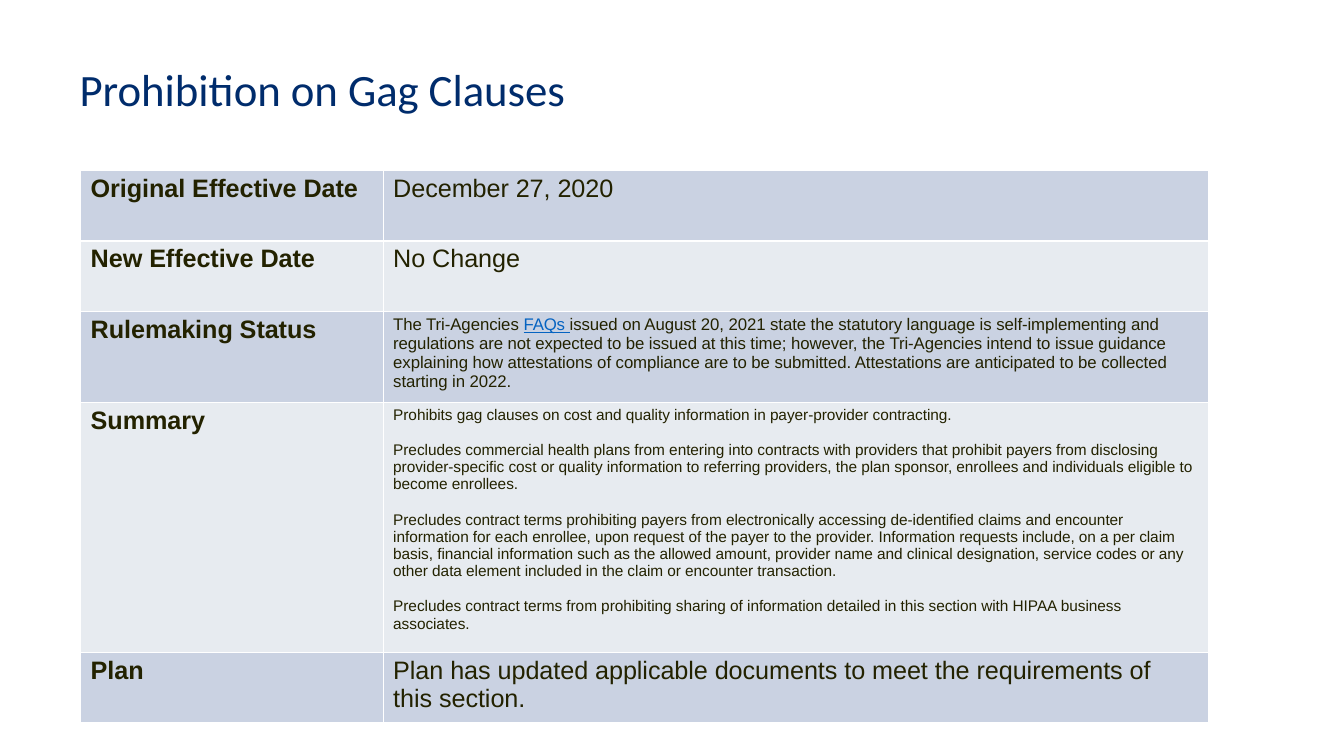
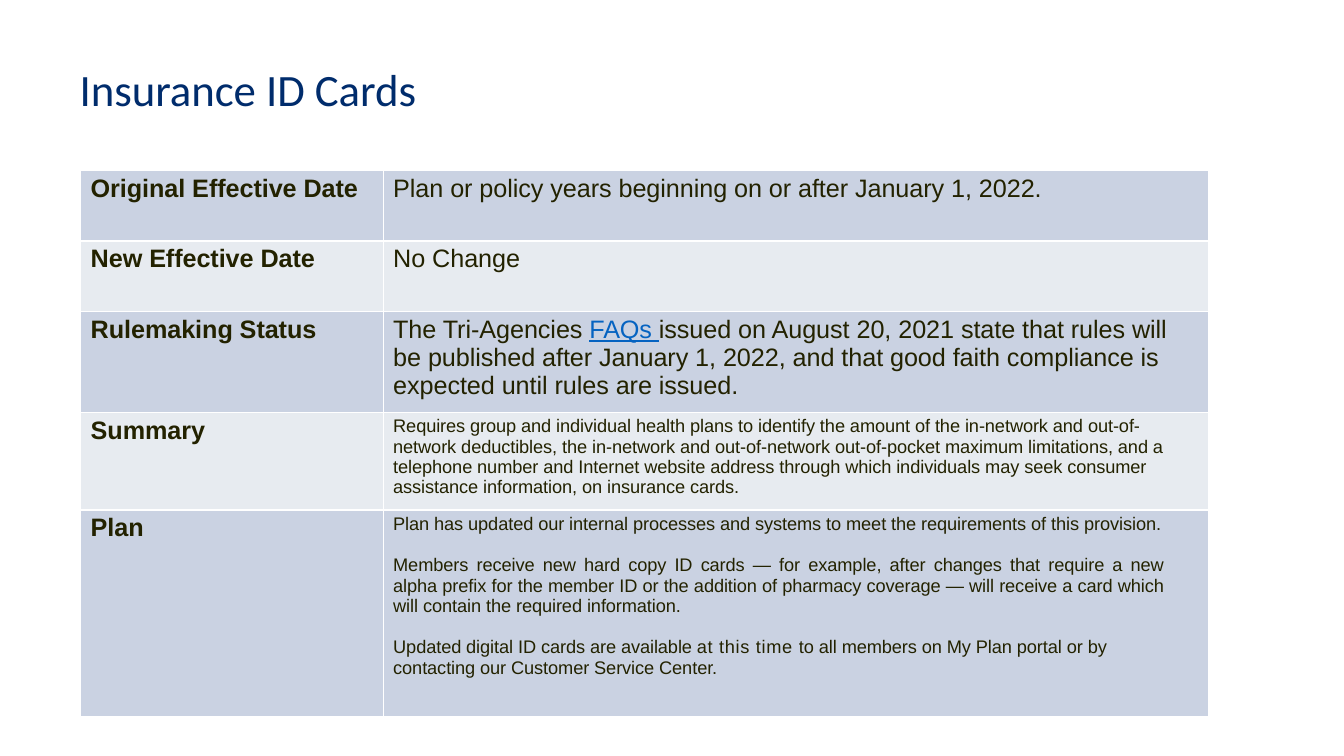
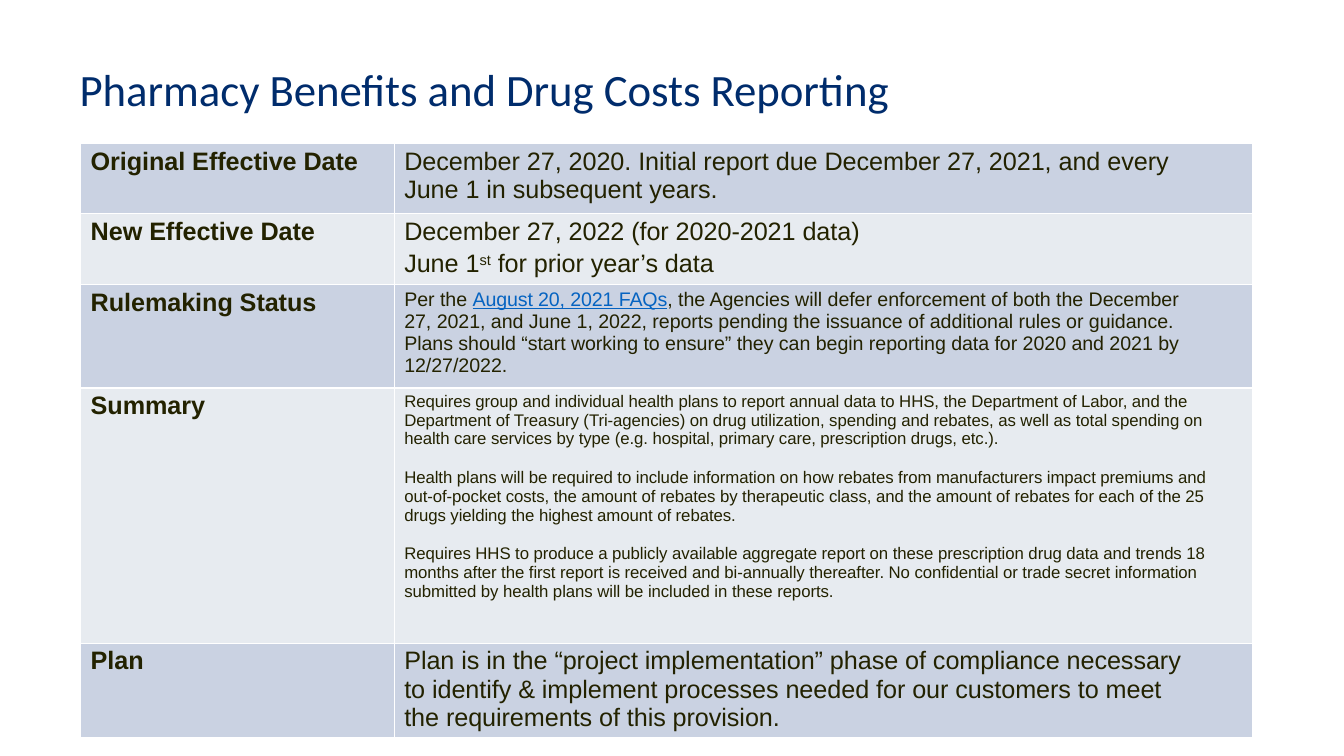
from dataclasses import dataclass

from lxml import etree
from pptx import Presentation
from pptx.dml.color import RGBColor
from pptx.enum.text import MSO_ANCHOR, MSO_AUTO_SIZE, PP_ALIGN
from pptx.oxml.ns import qn
from pptx.util import Inches, Pt

LEFT, JUSTIFY = PP_ALIGN.LEFT, PP_ALIGN.JUSTIFY
TOP, MIDDLE = MSO_ANCHOR.TOP, MSO_ANCHOR.MIDDLE
NO_AUTOFIT = MSO_AUTO_SIZE.NONE
TITLE_ONLY = 5

COLORS = {
    "title": "002C6C",
    "text": "232200",
    "link": "0563C1",
    "band_dark": "CAD2E2",
    "band_light": "E7EBF0",
    "border": "FFFFFF",
}
LABELS = ["Original Effective Date", "New Effective Date", "Rulemaking Status", "Summary", "Plan"]
LINK = {"color": "link", "underline": True, "spacing": -10}
SUPERSCRIPT = {"baseline": 30000}


@dataclass
class Entry:
    """Right-hand cell of a row; each paragraph is a string or a list of (text, style) runs."""
    height: float
    paragraphs: list
    size: float = 18
    right_margin: float = 0.2
    gap: float = 0
    justified: int = 0


class Deck:
    def __init__(self):
        self.presentation = Presentation()
        self.presentation.slide_width = Inches(13.33)
        self.presentation.slide_height = Inches(7.5)
        self.slide = None

    def add_slide(self, title):
        layout = self.presentation.slide_layouts[TITLE_ONLY]
        self.slide = self.presentation.slides.add_slide(layout)
        shape = self.slide.shapes.title
        shape.left, shape.top = Inches(0.79), Inches(0.6)
        shape.width, shape.height = Inches(11), Inches(0.56)
        frame = shape.text_frame
        frame.margin_left = frame.margin_right = frame.margin_top = frame.margin_bottom = 0
        frame.auto_size = NO_AUTOFIT
        frame.vertical_anchor = MIDDLE
        frame.text = title
        paragraph = frame.paragraphs[0]
        paragraph.alignment = LEFT
        self.style_run(paragraph.runs[0], 32, font="Calibri", color="title")

    def style_run(self, run, size, font="Arial", color="text", bold=False,
                  underline=False, spacing=-5, baseline=0):
        run.font.name = font
        run.font.size = Pt(size)
        run.font.bold = bold
        run.font.underline = underline
        run.font.color.rgb = RGBColor.from_string(COLORS[color])
        properties = run.font._element
        properties.set("spc", str(spacing))
        if baseline:
            properties.set("baseline", str(baseline))

    def add_runs(self, paragraph, content, size, bold=False):
        pieces = [(content, {})] if isinstance(content, str) else content
        for text, style in pieces:
            run = paragraph.add_run()
            run.text = text
            self.style_run(run, size, bold=bold, **style)

    def format_cell(self, cell, fill, right_margin=0):
        cell.margin_left, cell.margin_right = Inches(0.1), Inches(right_margin)
        cell.margin_top, cell.margin_bottom = Inches(0.04), 0
        cell.vertical_anchor = TOP
        properties = cell._tc.get_or_add_tcPr()
        for side in ("a:lnL", "a:lnR", "a:lnT", "a:lnB"):
            line = etree.SubElement(properties, qn(side), w=str(Pt(1)))
            solid = etree.SubElement(line, qn("a:solidFill"))
            etree.SubElement(solid, qn("a:srgbClr"), val=COLORS["border"])
        cell.fill.solid()
        cell.fill.fore_color.rgb = RGBColor.from_string(COLORS[fill])

    def add_provision_table(self, top, widths, entries):
        height = sum(entry.height for entry in entries)
        frame = self.slide.shapes.add_table(
            len(entries), 2, Inches(0.8), Inches(top), Inches(sum(widths)), Inches(height))
        table = frame.table
        table.first_row = table.horz_banding = False
        for column, width in zip(table.columns, widths):
            column.width = Inches(width)
        for index, (label, entry) in enumerate(zip(LABELS, entries)):
            table.rows[index].height = Inches(entry.height)
            fill = "band_light" if index % 2 else "band_dark"
            label_cell, body_cell = table.cell(index, 0), table.cell(index, 1)
            self.format_cell(label_cell, fill)
            self.add_runs(label_cell.text_frame.paragraphs[0], label, 18, bold=True)
            self.format_cell(body_cell, fill, entry.right_margin)
            self.fill_body(body_cell.text_frame, entry)

    def fill_body(self, text_frame, entry):
        for index, content in enumerate(entry.paragraphs):
            paragraph = text_frame.add_paragraph() if index else text_frame.paragraphs[0]
            if index:
                paragraph.space_before = Pt(entry.gap)
            paragraph.alignment = JUSTIFY if index < entry.justified else LEFT
            self.add_runs(paragraph, content, entry.size)


def main():
    deck = Deck()

    deck.add_slide("Prohibition on Gag Clauses")
    deck.add_provision_table(1.69, (3, 8.19), [
        Entry(0.7, ["December 27, 2020"]),
        Entry(0.7, ["No Change"]),
        Entry(0.9, [[
            ("The Tri-Agencies ", {}),
            ("FAQs ", LINK),
            ("issued on August 20, 2021 state the statutory language is self-implementing and "
             "regulations are not expected to be issued at this time; however, the Tri-Agencies "
             "intend to issue guidance explaining how attestations of compliance are to be "
             "submitted. Attestations are anticipated to be collected starting in 2022.", {}),
        ]], size=12),
        Entry(2.48, [
            "Prohibits gag clauses on cost and quality information in payer-provider contracting.",
            "Precludes commercial health plans from entering into contracts with providers that "
            "prohibit payers from disclosing provider-specific cost or quality information to "
            "referring providers, the plan sponsor, enrollees and individuals eligible to become "
            "enrollees.",
            "Precludes contract terms prohibiting payers from electronically accessing "
            "de-identified claims and encounter information for each enrollee, upon request of "
            "the payer to the provider. Information requests include, on a per claim basis, "
            "financial information such as the allowed amount, provider name and clinical "
            "designation, service codes or any other data element included in the claim or "
            "encounter transaction.",
            "Precludes contract terms from prohibiting sharing of information detailed in this "
            "section with HIPAA business associates.",
        ], size=11, right_margin=0.15, gap=13),
        Entry(0.7, ["Plan has updated applicable documents to meet the requirements of this "
                    "section."]),
    ])

    deck.add_slide("Insurance ID Cards")
    deck.add_provision_table(1.69, (3, 8.19), [
        Entry(0.7, ["Plan or policy years beginning on or after January 1, 2022."]),
        Entry(0.7, ["No Change"]),
        Entry(1, [[
            ("The Tri-Agencies ", {}),
            ("FAQs ", LINK),
            ("issued on August 20, 2021 state that rules will be published after January 1, "
             "2022, and that good faith compliance is expected until rules are issued.", {}),
        ]]),
        Entry(0.97, [
            "Requires group and individual health plans to identify the amount of the in-network "
            "and out-of-network deductibles, the in-network and out-of-network out-of-pocket "
            "maximum limitations, and a telephone number and Internet website address through "
            "which individuals may seek consumer assistance information, on insurance cards.",
        ], size=13),
        Entry(2.05, [
            "Plan has updated our internal processes and systems to meet the requirements of this "
            "provision.",
            "Members receive new hard copy ID cards — for example, after changes that require a "
            "new alpha prefix for the member ID or the addition of pharmacy coverage — will "
            "receive a card which will contain the required information.",
            [
                ("Updated digital ID cards are available ", {}),
                ("at this time ", {"spacing": 50}),
                ("to all members on My Plan portal or by contacting our Customer Service Center.",
                 {}),
            ],
        ], size=13, right_margin=0.45, gap=15, justified=2),
    ])

    deck.add_slide("Pharmacy Benefits and Drug Costs Reporting")
    deck.add_provision_table(1.42, (3.11, 8.51), [
        Entry(0.7, ["December 27, 2020. Initial report due December 27, 2021, and every June 1 in "
                    "subsequent years."], right_margin=0.3),
        Entry(0.7, [
            "December 27, 2022 (for 2020-2021 data)",
            [("June 1", {}), ("st", SUPERSCRIPT), (" for prior year’s data", {})],
        ], gap=3),
        Entry(1.03, [[
            ("Per the ", {}),
            ("August 20, 2021 FAQs", LINK),
            (", the Agencies will defer enforcement of both the December 27, 2021, and June 1, "
             "2022, reports pending the issuance of additional rules or guidance. Plans should "
             "“start working to ensure” they can begin reporting data for 2020 and 2021 by "
             "12/27/2022.", {}),
        ]], size=14, right_margin=0.5),
        Entry(2.53, [
            "Requires group and individual health plans to report annual data to HHS, the "
            "Department of Labor, and the Department of Treasury (Tri-agencies) on drug "
            "utilization, spending and rebates, as well as total spending on health care services "
            "by type (e.g. hospital, primary care, prescription drugs, etc.).",
            "Health plans will be required to include information on how rebates from "
            "manufacturers impact premiums and out-of-pocket costs, the amount of rebates by "
            "therapeutic class, and the amount of rebates for each of the 25 drugs yielding the "
            "highest amount of rebates.",
            "Requires HHS to produce a publicly available aggregate report on these prescription "
            "drug data and trends 18 months after the first report is received and bi-annually "
            "thereafter. No confidential or trade secret information submitted by health plans "
            "will be included in these reports.",
        ], size=12, right_margin=0.3, gap=14),
        Entry(0.94, ["Plan is in the “project implementation” phase of compliance necessary to "
                     "identify & implement processes needed for our customers to meet the "
                     "requirements of this provision."], right_margin=0.5),
    ])

    deck.presentation.save("out.pptx")


if __name__ == "__main__":
    main()
